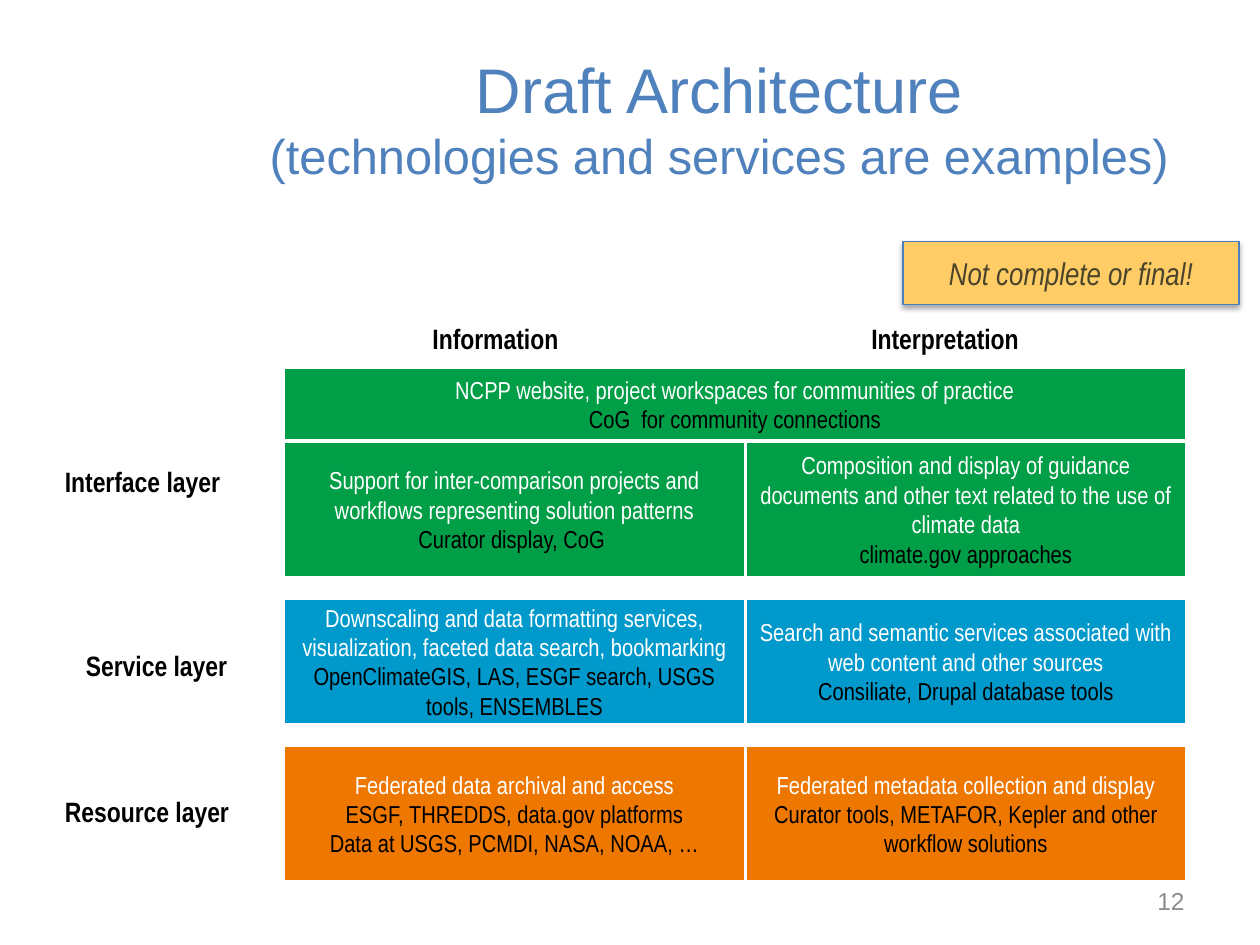
from pptx import Presentation
from pptx.dml.color import RGBColor
from pptx.enum.shapes import MSO_SHAPE
from pptx.enum.text import MSO_ANCHOR, MSO_AUTO_SIZE, PP_ALIGN
from pptx.oxml import parse_xml
from pptx.oxml.ns import nsdecls, qn
from pptx.util import Inches, Pt

RECT = MSO_SHAPE.RECTANGLE
MIDDLE = MSO_ANCHOR.MIDDLE
GROW = MSO_AUTO_SIZE.SHAPE_TO_FIT_TEXT
LEFT, CENTER, RIGHT = PP_ALIGN.LEFT, PP_ALIGN.CENTER, PP_ALIGN.RIGHT

WHITE = RGBColor(0xFF, 0xFF, 0xFF)
BLACK = RGBColor(0x00, 0x00, 0x00)
GRAY = RGBColor(0x8C, 0x8C, 0x8C)
TITLE_BLUE = RGBColor(0x4F, 0x81, 0xBD)
GREEN = RGBColor(0x00, 0x9E, 0x47)
BLUE = RGBColor(0x00, 0x99, 0xCC)
ORANGE = RGBColor(0xEE, 0x77, 0x00)
NOTE_FILL = RGBColor(0xFF, 0xCC, 0x66)
NOTE_LINE = RGBColor(0x4B, 0x7E, 0xBC)
NOTE_TEXT = RGBColor(0x4A, 0x45, 0x2A)

UNIT = Inches(1) / 12  # the slide is a grid of 120 columns by 90 rows
INFO, INTERP = (27, 44), (71, 42)  # left column and width
FULL = (INFO[0], INFO[1] + INTERP[1])

LAYERS = [  # colour, top row, height, information text, interpretation text
    (GREEN, 42, 13,
     ["Support for inter-comparison projects and workflows representing "
      "solution patterns", "Curator display, CoG "],
     ["Composition and display of guidance documents and other text related "
      "to the use of climate data", "climate.gov approaches"]),
    (BLUE, 57, 12,
     ["Downscaling and data formatting services, visualization, faceted data "
      "search, bookmarking",
      "OpenClimateGIS, LAS, ESGF search, USGS tools, ENSEMBLES"],
     ["Search and semantic services associated with web content and other "
      "sources", "Consiliate, Drupal database tools"]),
    (ORANGE, 71, 13,
     ["Federated data archival and access",
      "ESGF, THREDDS, data.gov platforms",
      "Data at USGS, PCMDI, NASA, NOAA, …"],
     ["Federated metadata collection and display",
      "Curator tools, METAFOR, Kepler and other workflow solutions"]),
]
LABELS = [  # text, left column, top row, width
    ("Information", 40, 30, 14.5),
    ("Interpretation", 81.8, 30, 16.7),
    ("Interface layer", 5, 43.6, 17.3),
    ("Service layer", 7, 61.2, 16.6),
    ("Resource layer", 5, 75.1, 18.7),
]


class Deck:
    """Holds the text styles and the current slide."""

    TITLE = {"name": "Arial", "size": Pt(36), "color": TITLE_BLUE}
    SUBTITLE = TITLE | {"size": Pt(27.9)}
    SERVICE = {"name": "Arial Narrow", "size": Pt(14), "color": WHITE}
    EXAMPLE = SERVICE | {"color": BLACK}
    LABEL = EXAMPLE | {"size": Pt(16), "bold": True}
    NOTE = SERVICE | {"size": Pt(18), "color": NOTE_TEXT, "italic": True}
    NUMBER = {"name": "Arial", "size": Pt(14), "color": GRAY}

    def __init__(self, prs):
        self.s = prs.slides.add_slide(prs.slide_layouts[5])

    def box(self, *cells):
        return [round(n * UNIT) for n in cells]

    def add_run(self, p, text, style):
        r = p.add_run()
        r.text = text
        for key, value in style.items():
            if key == "color":
                r.font.color.rgb = value
            else:
                setattr(r.font, key, value)

    def fill_text(self, sp, lines, align=CENTER):
        """Set (text, style) pairs, one paragraph each."""
        tf = sp.text_frame
        tf.word_wrap = True
        tf.vertical_anchor = MIDDLE
        for i, (text, style) in enumerate(lines):
            p = tf.add_paragraph() if i else tf.paragraphs[0]
            p.alignment = align
            self.add_run(p, text, style)

    def title(self, text, subtitle):
        sp = self.s.shapes.title
        sp.left, sp.top, sp.width, sp.height = self.box(21, 2, 95, 18.4)
        self.fill_text(sp, [(text, self.TITLE)])
        p = sp.text_frame.paragraphs[0]
        p.add_line_break()
        self.add_run(p, subtitle, self.SUBTITLE)

    def rect(self, x, y, w, h, fill, line, weight):
        sp = self.s.shapes.add_shape(RECT, *self.box(x, y, w, h))
        sp.shadow.inherit = False
        sp.fill.solid()
        sp.fill.fore_color.rgb = fill
        sp.line.color.rgb = line
        sp.line.width = Pt(weight)
        return sp

    def block(self, column, y, h, fill, texts):
        """A coloured cell: the service in white, its examples in black."""
        x, w = column
        sp = self.rect(x, y, w, h, fill, WHITE, 2)
        styles = [self.SERVICE] + [self.EXAMPLE] * (len(texts) - 1)
        self.fill_text(sp, zip(texts, styles))

    def label(self, text, x, y, w):
        sp = self.s.shapes.add_textbox(*self.box(x, y, w, 4.4))
        self.fill_text(sp, [(text, self.LABEL)], LEFT)
        sp.text_frame.word_wrap = False
        sp.text_frame.auto_size = GROW

    def note(self, text, x, y, w, h):
        sp = self.rect(x, y, w, h, NOTE_FILL, NOTE_LINE, 0.75)
        self.fill_text(sp, [(text, self.NOTE)])
        effects = sp._element.spPr.find(qn("a:effectLst"))
        effects.append(parse_xml(
            f'<a:outerShdw {nsdecls("a")} blurRad="{Pt(3.1)}" dist="{Pt(1.8)}" '
            'dir="5400000" rotWithShape="0"><a:srgbClr val="000000">'
            '<a:alpha val="35000"/></a:srgbClr></a:outerShdw>'))

    def number(self, text, x, y, w, h):
        sp = self.s.shapes.add_textbox(*self.box(x, y, w, h))
        self.fill_text(sp, [(text, self.NUMBER)], RIGHT)


def main():
    prs = Presentation()
    prs.slide_width, prs.slide_height = Inches(10), Inches(7.5)
    deck = Deck(prs)
    deck.title("Draft Architecture", "(technologies and services are examples)")
    for fill, y, h, info, interp in LAYERS:
        deck.block(INFO, y, h, fill, info)
        deck.block(INTERP, y, h, fill, interp)
    deck.block(FULL, 35, 7, GREEN,
               ["NCPP website, project workspaces for communities of practice",
                "CoG  for community connections"])
    for label in LABELS:
        deck.label(*label)
    deck.note("Not complete or final!", 86, 23, 32, 6)
    deck.number("12", 86, 83.4, 28, 4.8)
    prs.save("out.pptx")


if __name__ == "__main__":
    main()
